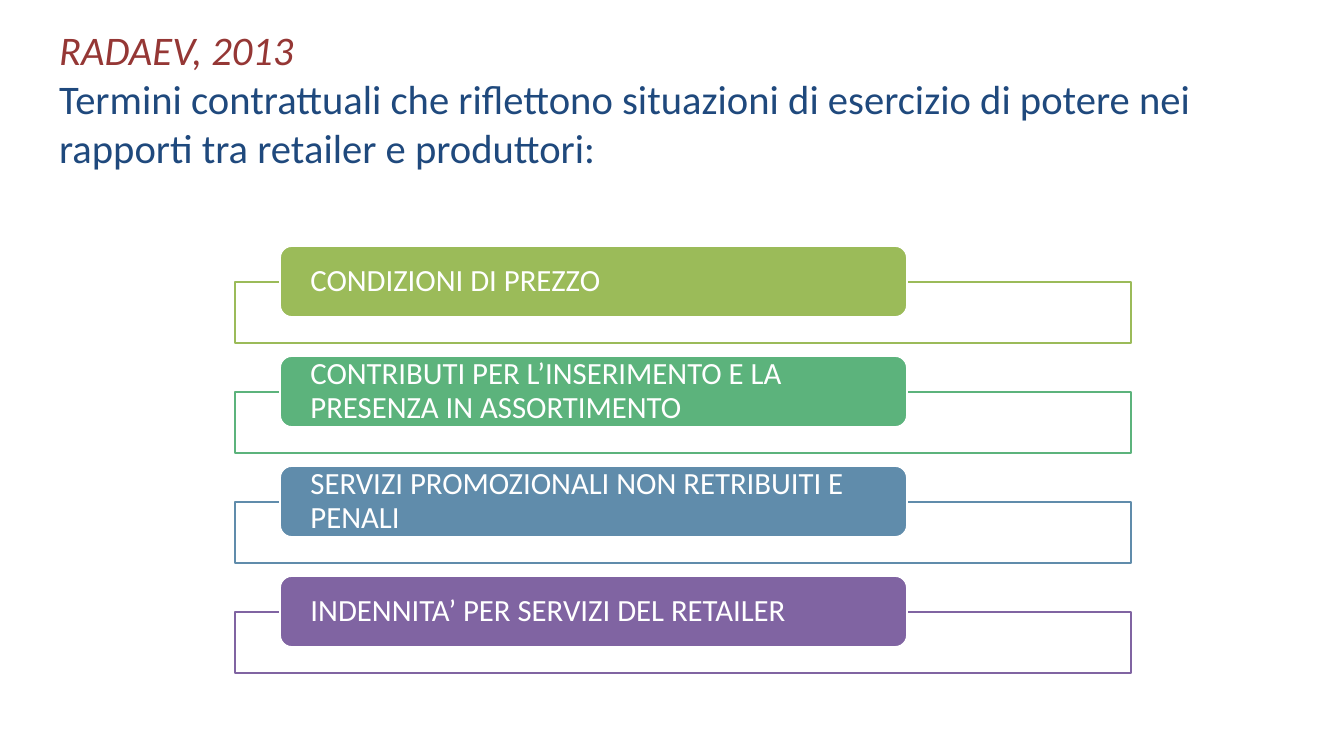
from lxml.etree import SubElement
from pptx import Presentation
from pptx.dml.color import RGBColor
from pptx.enum.shapes import MSO_SHAPE
from pptx.enum.text import MSO_ANCHOR, MSO_AUTO_SIZE, PP_ALIGN
from pptx.oxml.ns import qn
from pptx.util import Pt

PX = 914400 / 100.8
COLORS = {
    "white": "FFFFFF",
    "source": "953735",
    "heading": "1F497D",
    "price": "9BBB59",
    "listing": "5CB37C",
    "promotion": "608CAB",
    "allowance": "8064A2",
}
TERMS = [
    ("CONDIZIONI DI PREZZO", "price"),
    ("CONTRIBUTI PER L’INSERIMENTO E LA PRESENZA IN ASSORTIMENTO", "listing"),
    ("SERVIZI PROMOZIONALI NON RETRIBUITI E PENALI", "promotion"),
    ("INDENNITA’ PER SERVIZI DEL RETAILER", "allowance"),
]
HEADING = [
    ("RADAEV, 2013", "source", True),
    ("Termini contrattuali che riflettono situazioni di esercizio di potere nei "
     "rapporti tra retailer e produttori:", "heading", False),
]
ROW_PITCH = 110


def write(paragraph, text, color, **formats):
    paragraph.text = text
    paragraph.alignment = PP_ALIGN.LEFT
    font = paragraph.runs[0].font
    font.color.rgb = RGBColor.from_string(COLORS[color])
    for name, value in {"name": "Calibri", **formats}.items():
        setattr(font, name, value)


def add_box(slide, kind, bounds, fill, line):
    shape = slide.shapes.add_shape(kind, *[round(length * PX) for length in bounds])
    shape.shadow.inherit = False
    shape.fill.solid()
    shape.fill.fore_color.rgb = RGBColor.from_string(COLORS[fill])
    shape.line.color.rgb = RGBColor.from_string(COLORS[line])
    shape.line.width = Pt(1.25)
    return shape


presentation = Presentation()
presentation.slide_width = round(1344 * PX)
presentation.slide_height = round(756 * PX)
slide = presentation.slides.add_slide(presentation.slide_layouts[5])

title = slide.shapes.title
for name, length in {"left": 49, "top": 20, "width": 1220, "height": 276}.items():
    setattr(title, name, round(length * PX))
title.fill.solid()
title.fill.fore_color.rgb = RGBColor.from_string(COLORS["white"])
title_frame = title.text_frame
title_formats = {
    "word_wrap": True,
    "auto_size": MSO_AUTO_SIZE.NONE,
    "vertical_anchor": MSO_ANCHOR.TOP,
}
for name, value in title_formats.items():
    setattr(title_frame, name, value)
title_frame.add_paragraph()
for paragraph, (text, color, italic) in zip(title_frame.paragraphs, HEADING):
    write(paragraph, text, color, size=Pt(29), italic=italic)

label_formats = {
    "word_wrap": True,
    "vertical_anchor": MSO_ANCHOR.MIDDLE,
    "margin_left": round(27 * PX),
    "margin_right": round(27 * PX),
    "margin_top": 0,
    "margin_bottom": 0,
}
for row, (text, color) in enumerate(TERMS):
    offset = row * ROW_PITCH
    frame = add_box(slide, MSO_SHAPE.RECTANGLE, (235, 282 + offset, 896, 61), "white", color)
    fill_color = frame.fill._xPr.find(qn("a:solidFill"))[0]
    SubElement(fill_color, qn("a:alpha"), val="90000")
    label = add_box(slide, MSO_SHAPE.ROUNDED_RECTANGLE, (280, 246 + offset, 627, 71), color, "white")
    for name, value in label_formats.items():
        setattr(label.text_frame, name, value)
    paragraph = label.text_frame.paragraphs[0]
    paragraph.line_spacing = 0.9
    write(paragraph, text, "white", size=Pt(22))

presentation.save("out.pptx")
